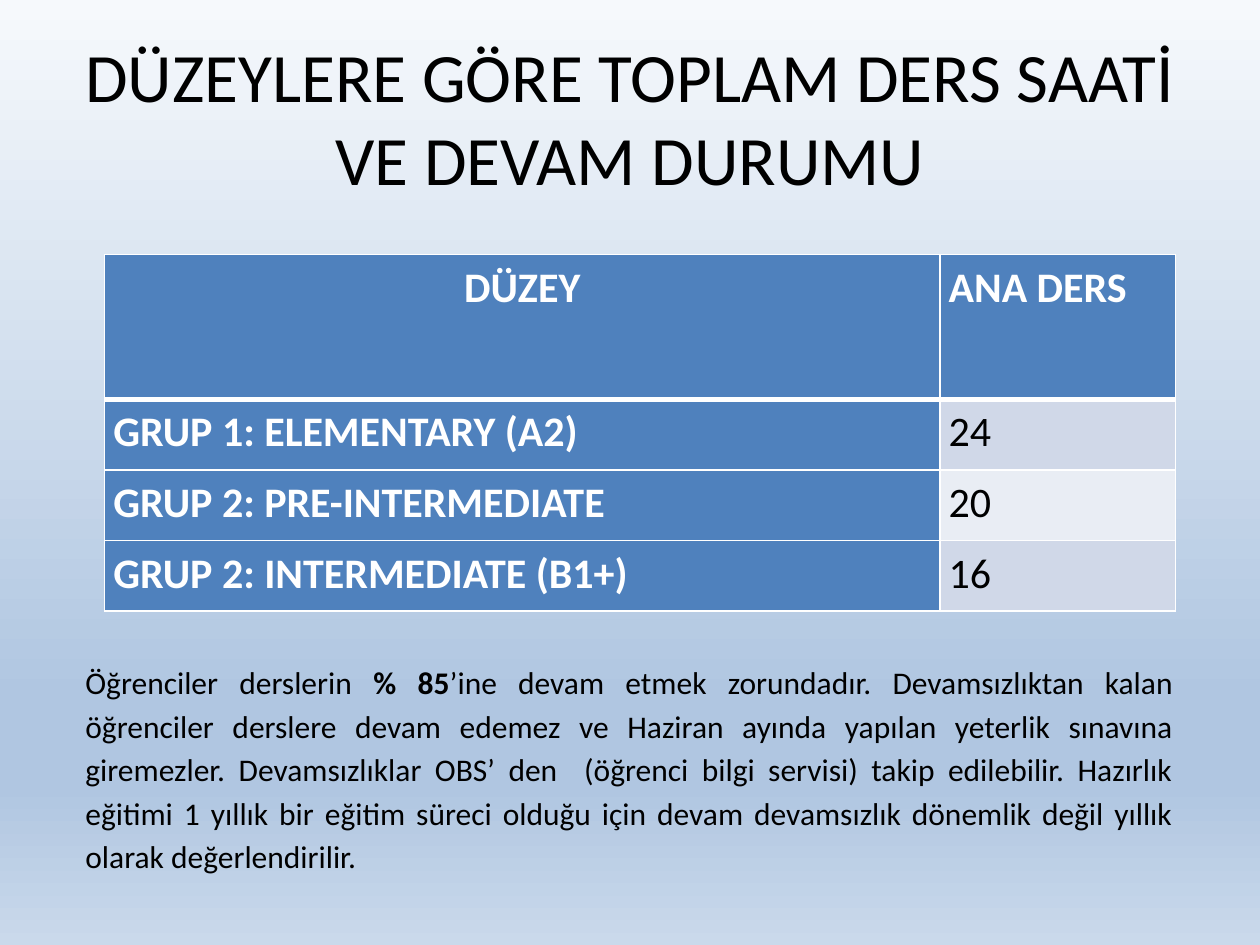
from lxml.etree import SubElement
from pptx import Presentation
from pptx.dml.color import RGBColor
from pptx.enum.text import MSO_ANCHOR, MSO_AUTO_SIZE, PP_ALIGN
from pptx.oxml.ns import qn
from pptx.util import Inches, Pt

BLACK = RGBColor(0x00, 0x00, 0x00)
WHITE = RGBColor(0xFF, 0xFF, 0xFF)
BLUE = RGBColor(0x4F, 0x81, 0xBD)
BAND_DARK = RGBColor(0xD0, 0xD8, 0xE8)
BAND_LIGHT = RGBColor(0xE9, 0xED, 0xF4)
SKY_TOP = RGBColor(0xF6, 0xF9, 0xFC)
SKY_DEEP = RGBColor(0xB0, 0xC6, 0xE1)
SKY_BOTTOM = RGBColor(0xCA, 0xD9, 0xEB)
SKY_STOPS = [(0, SKY_TOP), (74, SKY_DEEP), (83, SKY_DEEP), (100, SKY_BOTTOM)]

TITLE = "DÜZEYLERE GÖRE TOPLAM DERS SAATİ VE DEVAM DURUMU"
LESSON_ROWS = [
    ("DÜZEY", "ANA DERS"),
    ("GRUP 1: ELEMENTARY (A2)", "24"),
    ("GRUP 2: PRE-INTERMEDIATE ", "20"),
    ("GRUP 2: INTERMEDIATE (B1+)", "16"),
]
COLUMN_WIDTHS = [6.63, 1.87]
ROW_HEIGHTS = [1.15, 0.56, 0.56, 0.56]
ATTENDANCE = [
    ("Öğrenciler derslerin ", False),
    ("% 85", True),
    ("’ine devam etmek zorundadır. Devamsızlıktan kalan öğrenciler derslere "
     "devam edemez ve Haziran ayında yapılan yeterlik sınavına giremezler. "
     "Devamsızlıklar OBS’ den  (öğrenci bilgi servisi) takip edilebilir. "
     "Hazırlık eğitimi 1 yıllık bir eğitim süreci olduğu için devam "
     "devamsızlık dönemlik değil yıllık olarak değerlendirilir. ", False),
]

BODY_PARA = {"alignment": PP_ALIGN.JUSTIFY, "line_spacing": 1.15, "space_after": Pt(10)}
CELL_MARGINS = {"margin_left": Inches(0.07), "margin_right": Inches(0.07),
                "margin_top": 0, "margin_bottom": 0}


def apply_format(target, values):
    """Set every attribute named in values on target."""
    for name, value in values.items():
        setattr(target, name, value)


def add_span(para, text, size, color=BLACK, bold=False):
    """Append one formatted run to a paragraph."""
    span = para.add_run()
    span.text = text
    apply_format(span.font, {"name": "Calibri", "size": Pt(size), "bold": bold})
    span.font.color.rgb = color


def paint_background(page):
    """Fill the page with a vertical gradient of several stops."""
    fill = page.background.fill
    fill.gradient()
    fill.gradient_angle = 270
    stops = page.element.find(".//" + qn("a:gsLst"))
    for stop in list(stops):
        stops.remove(stop)
    for percent, color in SKY_STOPS:
        stop = SubElement(stops, qn("a:gs"), pos=str(percent * 1000))
        SubElement(stop, qn("a:srgbClr"), val=str(color))


def add_title(page):
    """Place the heading in the title placeholder."""
    box = page.shapes.title
    apply_format(box, {"left": Inches(0.5), "top": Inches(0.3),
                       "width": Inches(9), "height": Inches(1.25)})
    apply_format(box.text_frame, {"word_wrap": True, "auto_size": MSO_AUTO_SIZE.NONE,
                                  "vertical_anchor": MSO_ANCHOR.MIDDLE})
    para = box.text_frame.paragraphs[0]
    para.alignment = PP_ALIGN.CENTER
    add_span(para, TITLE, 39.6)


def draw_borders(cell, row_index):
    """Draw white cell borders, heavier beneath the header row."""
    widths = {"L": 1, "R": 1, "T": 3 if row_index == 1 else 1,
              "B": 3 if row_index == 0 else 1}
    properties = cell._tc.get_or_add_tcPr()
    for side, width in widths.items():
        line = SubElement(properties, qn("a:ln" + side), w=str(Pt(width)))
        SubElement(SubElement(line, qn("a:solidFill")), qn("a:srgbClr"), val=str(WHITE))


def fill_cell(cell, text, row_index, column_index):
    """Write and colour one table cell by its place in the grid."""
    heading = row_index == 0 or column_index == 0
    band = BAND_DARK if row_index % 2 else BAND_LIGHT
    apply_format(cell, CELL_MARGINS)
    draw_borders(cell, row_index)
    cell.fill.solid()
    cell.fill.fore_color.rgb = BLUE if heading else band
    para = cell.text_frame.paragraphs[0]
    apply_format(para, BODY_PARA)
    if row_index == column_index == 0:
        para.alignment = PP_ALIGN.CENTER
    add_span(para, text, 24, WHITE if heading else BLACK, heading)


def add_lesson_table(page):
    """Add the table of lesson hours by level."""
    frame = page.shapes.add_table(len(LESSON_ROWS), len(COLUMN_WIDTHS), Inches(0.83),
                                  Inches(2.02), Inches(8.5), Inches(2.83))
    table = frame.table
    table.first_col = True
    for column, width in zip(table.columns, COLUMN_WIDTHS):
        column.width = Inches(width)
    for row_index, texts in enumerate(LESSON_ROWS):
        table.rows[row_index].height = Inches(ROW_HEIGHTS[row_index])
        for column_index, text in enumerate(texts):
            fill_cell(table.cell(row_index, column_index), text, row_index, column_index)


def add_attendance_note(page):
    """Add the justified paragraph on attendance."""
    box = page.shapes.add_textbox(Inches(0.58), Inches(5.17), Inches(8.83), Inches(1.82))
    apply_format(box.text_frame, {"word_wrap": True,
                                  "auto_size": MSO_AUTO_SIZE.SHAPE_TO_FIT_TEXT})
    para = box.text_frame.paragraphs[0]
    apply_format(para, BODY_PARA)
    for text, bold in ATTENDANCE:
        add_span(para, text, 18, bold=bold)


def main():
    """Build and save the deck."""
    deck = Presentation()
    apply_format(deck, {"slide_width": Inches(10), "slide_height": Inches(7.5)})
    page = deck.slides.add_slide(deck.slide_layouts.get_by_name("Title Only"))
    paint_background(page)
    add_title(page)
    add_lesson_table(page)
    add_attendance_note(page)
    deck.save("out.pptx")


if __name__ == "__main__":
    main()
